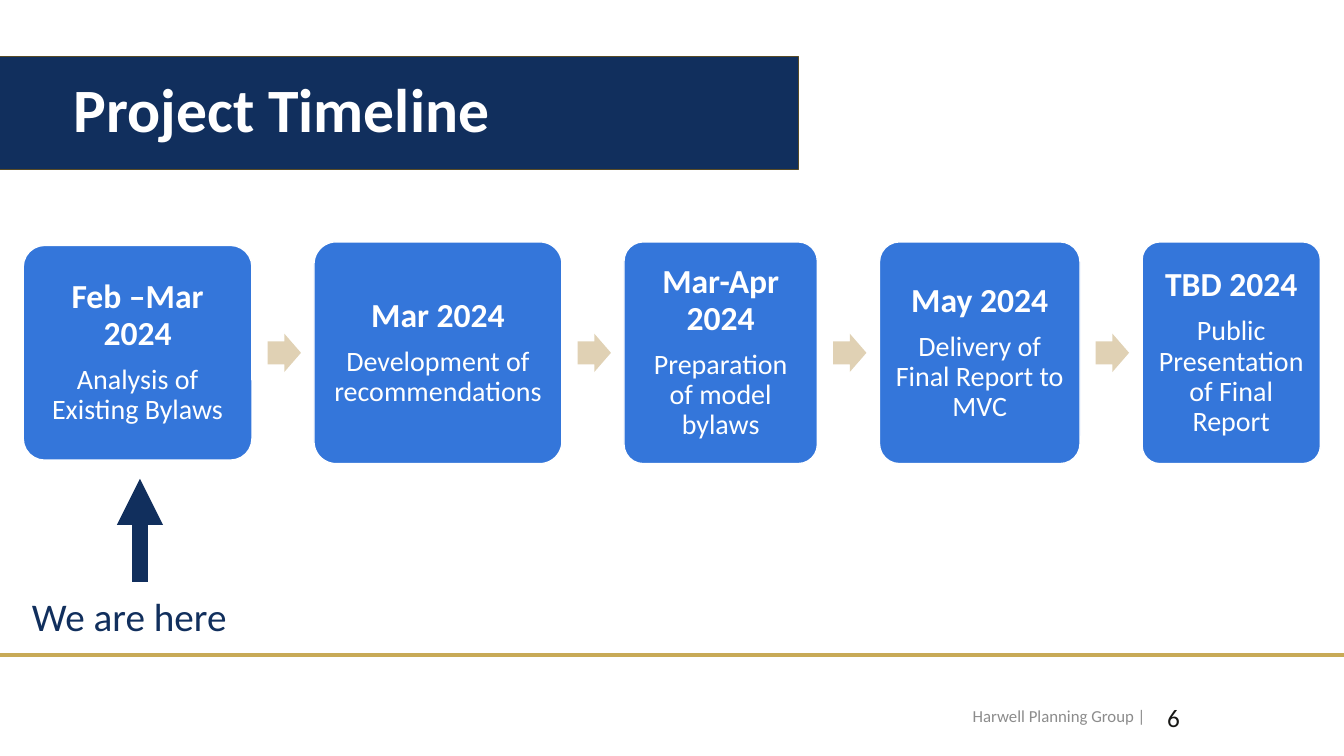
from pptx import Presentation
from pptx import util as u
from pptx.dml import color
from pptx.enum import shapes, text
from pptx.oxml import ns
from lxml import etree

Pt = u.Pt
Kind = shapes.MSO_SHAPE
Align = text.PP_ALIGN
Anchor = text.MSO_ANCHOR

FONT = "Calibri"
HUES = {
    "navy": "112F5D", "brown": "584B26", "gold": "C8AA57", "blue": "3476DA",
    "sand": "E0D1B4", "white": "FFFFFF", "gray": "8C8C8C", "black": "181816",
}

# Timeline: width, height, date, task
STEPS = [
    (163.4, 153.4, "Feb –Mar 2024", "Analysis of Existing Bylaws"),
    (177.1, 158.4, "Mar 2024", "Development of recommendations"),
    (138.2, 158.4, "Mar-Apr 2024", "Preparation of model bylaws"),
    (143.3, 158.4, "May 2024", "Delivery of Final Report to MVC"),
    (127.4, 158.4, "TBD 2024", "Public Presentation of Final Report"),
]
LEFT, MID, GAP = 16.6, 252, 44.3
ARROW_W, ARROW_H, ARROW_GAP = 23.8, 27.4, 11.2


def rgb(hue):
    return color.RGBColor.from_string(HUES[hue])


def add_shape(slide, kind, x, y, w, h, fill, edge=None):
    shape = slide.shapes.add_shape(kind, Pt(x), Pt(y), Pt(w), Pt(h))
    shape.shadow.inherit = False
    shape.fill.solid()
    shape.fill.fore_color.rgb = rgb(fill)
    if edge:
        shape.line.color.rgb = rgb(edge)
        shape.line.width = Pt(1)
    else:
        shape.line.fill.background()
    return shape


def style(para, words, size, hue, bold=False, align=Align.LEFT):
    para.text = words
    para.alignment = align
    font = para.font
    font.name, font.size, font.bold = FONT, Pt(size), bold
    font.color.rgb = rgb(hue)


def add_label(slide, x, y, w, h, words, size, hue,
              align=Align.LEFT, anchor=Anchor.TOP):
    frame = slide.shapes.add_textbox(Pt(x), Pt(y), Pt(w), Pt(h)).text_frame
    frame.word_wrap = True
    frame.vertical_anchor = anchor
    style(frame.paragraphs[0], words, size, hue, align=align)


def add_line(slide, x1, y1, x2, y2, hue, width, arrow=False):
    line = slide.shapes.add_connector(
        shapes.MSO_CONNECTOR.STRAIGHT, Pt(x1), Pt(y1), Pt(x2), Pt(y2))
    line.line.color.rgb = rgb(hue)
    line.line.width = Pt(width)
    if arrow:
        edge = line.line._get_or_add_ln()
        etree.SubElement(edge, ns.qn("a:tailEnd"), type="triangle")
    etree.SubElement(line._element.spPr, ns.qn("a:effectLst"))


def add_title(slide, words):
    band = add_shape(slide, Kind.RECTANGLE, -14.4, 40.3, 584.6, 80.6,
                     "navy", "brown")
    frame = band.text_frame
    frame.margin_left = Pt(67)
    frame.vertical_anchor = Anchor.MIDDLE
    para = frame.paragraphs[0]
    style(para, words, 44, "white", bold=True)
    para.line_spacing = 0.9


def add_step(slide, x, w, h, date, task):
    card = add_shape(slide, Kind.ROUNDED_RECTANGLE, x, MID - h / 2, w, h,
                     "blue", "white")
    card.adjustments[0] = 0.1
    frame = card.text_frame
    frame.word_wrap = True
    frame.vertical_anchor = Anchor.MIDDLE
    frame.margin_left = frame.margin_right = Pt(7.2)
    frame.margin_top = frame.margin_bottom = Pt(7.2)
    head, body = frame.paragraphs[0], frame.add_paragraph()
    style(head, date, 24, "white", True, Align.CENTER)
    style(body, task, 20, "white", False, Align.CENTER)
    head.line_spacing = body.line_spacing = 0.9
    head.space_after = Pt(9)


def add_steps(slide):
    x = LEFT
    for num, (w, h, date, task) in enumerate(STEPS):
        if num:
            arrow = add_shape(slide, Kind.RIGHT_ARROW, x - GAP + ARROW_GAP,
                              MID - ARROW_H / 2, ARROW_W, ARROW_H, "sand")
            arrow.adjustments[0] = 0.6
        add_step(slide, x, w, h, date, task)
        x += w + GAP


def main():
    deck = Presentation()
    deck.slide_width, deck.slide_height = Pt(960), Pt(540)
    slide = deck.slides.add_slide(deck.slide_layouts[6])

    # Title band and footer
    add_line(slide, 0, 468, 960, 468, "gold", 3)
    add_title(slide, "Project Timeline")
    add_label(slide, 570, 496.8, 255.5, 28.8, "Harwell Planning Group |", 12,
              "gray", Align.RIGHT, Anchor.MIDDLE)
    add_label(slide, 826.6, 498.2, 40.3, 28.8, "6", 18, "black")

    # Timeline with the current stage marked
    add_steps(slide)
    add_line(slide, 100, 415.4, 100, 342, "navy", 11, arrow=True)
    add_label(slide, 15.8, 419.8, 168.5, 41, "We are here", 28, "navy")

    deck.save("out.pptx")


if __name__ == "__main__":
    main()
